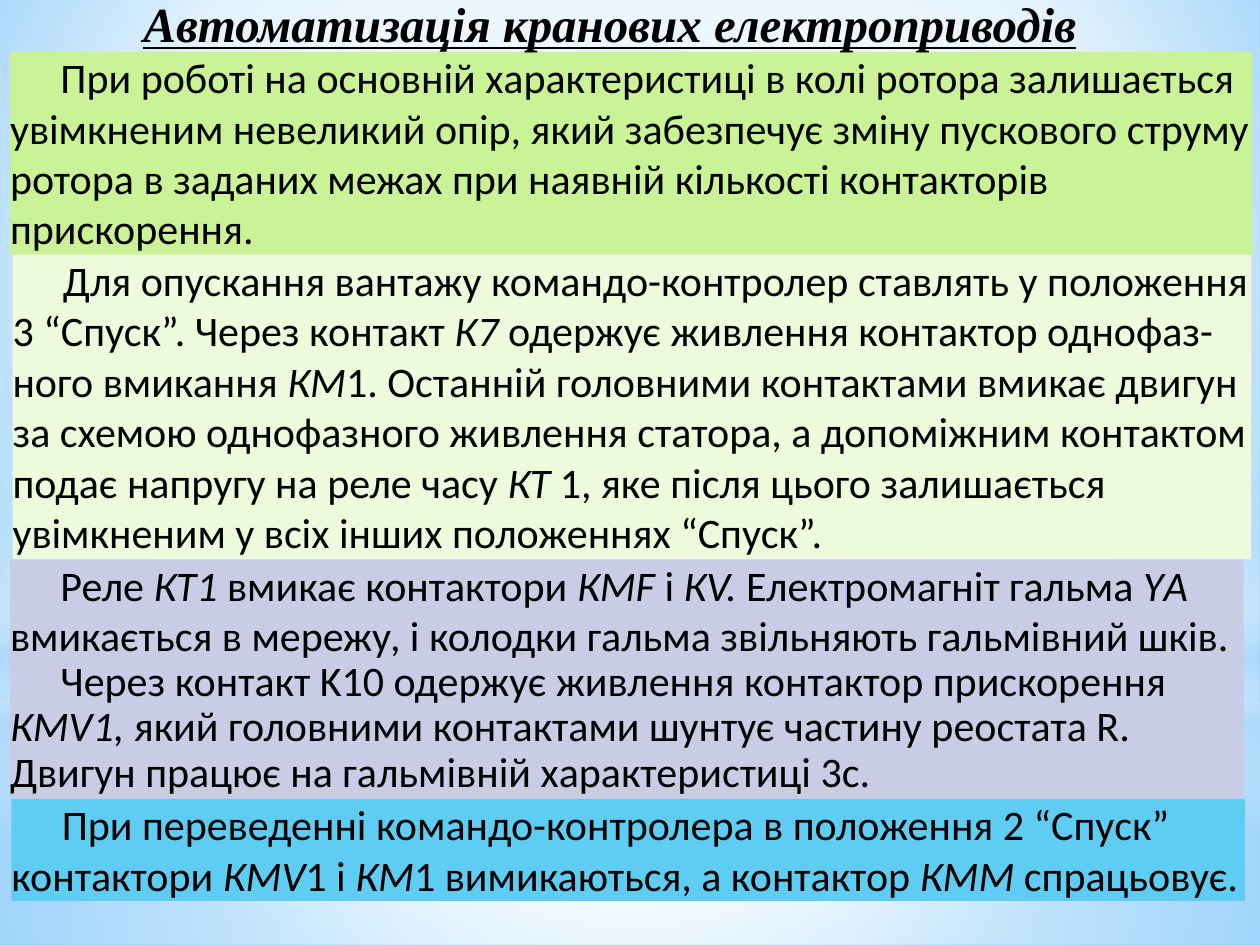
from lxml import etree
from pptx import Presentation
from pptx import util as u
from pptx.dml.color import RGBColor
from pptx.enum import shapes, text
from pptx.oxml.ns import qn

BLACK = RGBColor(0x00, 0x00, 0x00)
WHITE = RGBColor(0xFF, 0xFF, 0xFF)
MIST = RGBColor(0xB4, 0xDC, 0xFA)
SKY = RGBColor(0x9E, 0xD5, 0xFF)
AZURE = RGBColor(0x5B, 0xB9, 0xFF)
LIME = RGBColor(0xCA, 0xF2, 0x97)
PALE_LIME = RGBColor(0xED, 0xFB, 0xDC)
LAVENDER = RGBColor(0xC8, 0xCD, 0xE5)
CYAN = RGBColor(0x5E, 0xCC, 0xF3)

RECT = shapes.MSO_SHAPE.RECTANGLE
OVAL = shapes.MSO_SHAPE.OVAL
CENTRE = (50, 50, 50, 50)

HEADING = "Автоматизація кранових електроприводів"

HAZE = [
    (RECT, (0, 5.58, 10, 1.92), [(0, WHITE, 91), (37, WHITE, 76), (100, MIST, 79)], CENTRE),
    (RECT, (0, 0, 10, 5.58), [(0, WHITE, 89), (48, WHITE, 62), (100, MIST, 79)], CENTRE),
    (RECT, (0, 4.12, 10, 2.5),
     [(0, WHITE, 0), (29, WHITE, 30), (45, MIST, 40), (55, WHITE, 26), (65, MIST, 60), (100, WHITE, 0)],
     None),
    (OVAL, (0, 1.75, 10, 5.58), [(0, WHITE, 100), (56, WHITE, 0)], CENTRE),
]

PANELS = [
    ((0.08, 0.41, 9.86, 1.62), LIME, [
        ("При роботі на основній характеристиці в колі ротора залишається увімкненим "
         "невеликий опір, який забезпечує зміну пускового струму ротора в заданих межах "
         "при наявній кількості контакторів прискорення.", None)]),
    ((0.1, 2.02, 9.83, 2.42), PALE_LIME, [
        ("Для опускання вантажу командо-контролер ставлять у положення 3 “Спуск”. "
         "Через контакт *К7* одержує живлення контактор однофаз-ного вмикання *КМ*1. "
         "Останній головними контактами вмикає двигун за схемою однофазного живлення "
         "статора, а допоміжним контактом подає напругу на реле часу *КТ* 1, яке після "
         "цього залишається увімкненим у всіх інших положеннях “Спуск”.", None)]),
    ((0.08, 4.44, 9.79, 1.9), LAVENDER, [
        ("Реле *КТ1* вмикає контактори *КМF *і *КV.* Електромагніт гальма *YА* "
         "вмикається в мережу, і колодки гальма звільняють гальмівний шків.", None),
        ("Через контакт K10 одержує живлення контактор прискорення *КМV1,* який "
         "головними контактами шунтує частину реостата R. Двигун працює на гальмівній "
         "характеристиці 3с.", 0.9)]),
    ((0.09, 6.34, 9.79, 0.81), CYAN, [
        ("При переведенні командо-контролера в положення 2 “Спуск” контактори *КМV*1 і "
         "*КМ*1 вимикаються, а контактор *КММ* спрацьовує.", None)]),
]


def assign(target, values):
    for key, value in values.items():
        setattr(target, key, value)


class SlideBuilder:
    body_font = {"name": "Calibri", "size": u.Pt(24)}
    title_font = {"name": "Times New Roman", "size": u.Pt(28),
                  "bold": True, "italic": True, "underline": True}
    frame_format = {"margin_left": 0, "margin_top": 0, "margin_right": 0, "margin_bottom": 0,
                    "word_wrap": True, "vertical_anchor": text.MSO_ANCHOR.TOP,
                    "auto_size": text.MSO_AUTO_SIZE.SHAPE_TO_FIT_TEXT}
    first_line = u.Inches(0.4)

    def __init__(self, deck):
        self.slide = deck.slides.add_slide(deck.slide_layouts[5])

    def gradient(self, fill, owner, stops, focus):
        fill.gradient()
        grad = next(owner.iter(qn("a:gradFill")))
        for child in list(grad):
            grad.remove(child)
        stop_list = etree.SubElement(grad, qn("a:gsLst"))
        for position, color, opacity in stops:
            stop = etree.SubElement(stop_list, qn("a:gs"), pos=str(position * 1000))
            tint = etree.SubElement(stop, qn("a:srgbClr"), val=str(color))
            if opacity < 100:
                etree.SubElement(tint, qn("a:alpha"), val=str(opacity * 1000))
        if focus:
            circle = etree.SubElement(grad, qn("a:path"), attrib={"path": "circle"})
            edges = {side: str(share * 1000) for side, share in zip("ltrb", focus)}
            etree.SubElement(circle, qn("a:fillToRect"), attrib=edges)
        else:
            etree.SubElement(grad, qn("a:lin"), ang="5400000", scaled="0")

    def background(self, stops, focus):
        self.gradient(self.slide.background.fill, self.slide.element, stops, focus)

    def shape(self, kind, box):
        shape = self.slide.shapes.add_shape(kind, *map(u.Inches, box))
        shape.shadow.inherit = False
        shape.line.fill.background()
        return shape

    def haze(self, kind, box, stops, focus):
        shape = self.shape(kind, box)
        self.gradient(shape.fill, shape.element, stops, focus)

    def add_runs(self, paragraph, content, font, spacing):
        if spacing:
            paragraph.line_spacing = spacing
        for index, part in enumerate(content.split("*")):
            if part:
                run = paragraph.add_run()
                run.text = part
                assign(run.font, {"italic": index % 2 == 1, **font})
                run.font.color.rgb = BLACK

    def panel(self, box, color, paragraphs):
        panel = self.shape(RECT, box)
        panel.fill.solid()
        panel.fill.fore_color.rgb = color
        frame = panel.text_frame
        assign(frame, self.frame_format)
        for index, (content, spacing) in enumerate(paragraphs):
            paragraph = frame.add_paragraph() if index else frame.paragraphs[0]
            paragraph.alignment = text.PP_ALIGN.LEFT
            paragraph._p.get_or_add_pPr().set("indent", str(self.first_line))
            self.add_runs(paragraph, content, self.body_font, spacing)

    def title(self, box, content):
        title = self.slide.shapes.title
        assign(title, dict(zip(("left", "top", "width", "height"), map(u.Inches, box))))
        assign(title.text_frame, self.frame_format)
        heading = title.text_frame.paragraphs[0]
        heading.alignment = text.PP_ALIGN.CENTER
        self.add_runs(heading, content, self.title_font, 0.85)
        self.slide.shapes.element.append(title.element)


def main():
    deck = Presentation()
    deck.slide_width, deck.slide_height = u.Inches(10), u.Inches(7.5)
    builder = SlideBuilder(deck)
    builder.background([(0, SKY, 100), (60, WHITE, 100), (100, AZURE, 100)], (20, 10, 20, 60))
    for layer in HAZE:
        builder.haze(*layer)
    for panel in PANELS:
        builder.panel(*panel)
    builder.title((0.59, 0.02, 8.5, 0.4), HEADING)
    deck.save("out.pptx")


if __name__ == "__main__":
    main()
